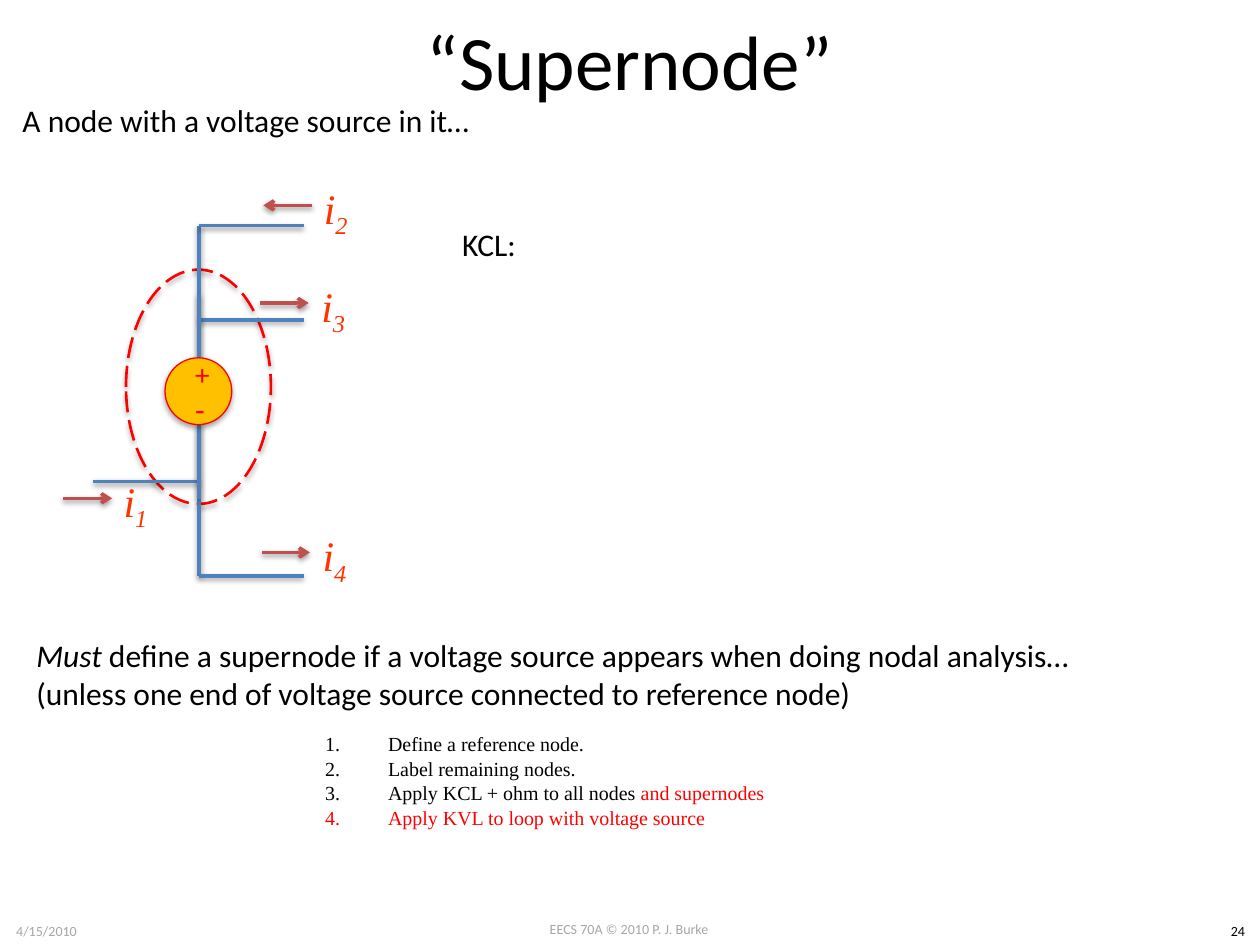
"""Build the supernode slide with its circuit sketch, analysis rules and numbered steps."""
from lxml.etree import SubElement
from pptx import Presentation
from pptx.dml.color import RGBColor
from pptx.enum.dml import MSO_LINE_DASH_STYLE as Dash
from pptx.enum.shapes import MSO_CONNECTOR as Connector, MSO_SHAPE as Shape
from pptx.enum.text import MSO_ANCHOR as Anchor, MSO_AUTO_SIZE as AutoSize, PP_ALIGN as Align
from pptx.oxml.ns import qn
from pptx.util import Inches, Pt

BLACK = RGBColor(0x00, 0x00, 0x00)
GREY = RGBColor(0xA6, 0xA6, 0xA6)
RED = RGBColor(0xFF, 0x00, 0x00)
ORANGE = RGBColor(0xFF, 0x33, 0x00)
GOLD = RGBColor(0xFF, 0xC0, 0x00)
WIRE_BLUE = RGBColor(0x4F, 0x81, 0xBD)
ARROW_RED = RGBColor(0xC0, 0x50, 0x4D)
SERIF = "Times New Roman"

presentation = Presentation()
presentation.slide_width, presentation.slide_height = Inches(10), Inches(7.5)
CELL = presentation.slide_width // 100
slide = presentation.slides.add_slide(presentation.slide_layouts[1])


def add_text(box, paragraphs, size=18, color=BLACK, font="Calibri", align=Align.LEFT,
             anchor=Anchor.TOP, wrap=True, shape=None):
    """Write paragraphs of (text, font overrides) runs into a box given in grid cells."""
    shape = shape or slide.shapes.add_textbox(0, 0, CELL, CELL)
    for side, cells in zip(("left", "top", "width", "height"), box):
        setattr(shape, side, round(cells * CELL))
    frame = shape.text_frame
    for name, value in {"auto_size": AutoSize.NONE, "word_wrap": wrap,
                        "vertical_anchor": anchor}.items():
        setattr(frame, name, value)
    for index, runs in enumerate(paragraphs):
        paragraph = frame.add_paragraph() if index else frame.paragraphs[0]
        paragraph.alignment = align
        for text, overrides in runs:
            run = paragraph.add_run()
            run.text = text
            look = {"name": font, "size": Pt(size), "color": color, **overrides}
            run.font.color.rgb = look.pop("color")
            baseline = look.pop("baseline", None)
            for name, value in look.items():
                setattr(run.font, name, value)
            if baseline:
                run._r.get_or_add_rPr().set("baseline", baseline)
    return frame


def outline(shape, color, width, opacity=38, distance=1.6):
    """Set the line of a shape and give it a soft shadow below."""
    shape.line.color.rgb = color
    shape.line.width = Pt(width)
    effects = SubElement(shape.element.spPr, qn("a:effectLst"))
    shadow = SubElement(effects, qn("a:outerShdw"), blurRad=str(Pt(3.1)),
                        dist=str(Pt(distance)), dir="5400000", rotWithShape="0")
    black = SubElement(shadow, qn("a:srgbClr"), val="000000")
    SubElement(black, qn("a:alpha"), val=str(opacity * 1000))


for text, box, color in [
    ("EECS 70A © 2010 P. J. Burke", (38.3, 72.6, 23.3, 2.4), GREY),
    ("4/15/2010", (0, 72.7, 7.4, 2.4), GREY),
    ("24", (96.5, 72.7, 3.5, 2.4), BLACK),
]:
    add_text(box, [[(text, {})]], size=8, color=color, align=Align.CENTER)

add_text((5, 0, 90, 9.5), [[("“Supernode”", {})]], size=44, align=Align.CENTER,
         anchor=Anchor.MIDDLE, shape=slide.shapes.title)

boundary = slide.shapes.add_shape(Shape.OVAL, *[round(v * CELL) for v in (10, 21.4, 11.5, 18.6)])
boundary.fill.background()
boundary.line.dash_style = Dash.LONG_DASH
outline(boundary, RED, 1.5, 35, 1.8)

TRUNK, BRANCH_END = 15.8, 24.1
wires = [(TRUNK, 45.7, TRUNK, 17.9), (7.4, 38.2, TRUNK, 38.2)]
wires += [(TRUNK, row, BRANCH_END, row) for row in (17.9, 25.4, 45.7)]
leads = [(TRUNK, 39.6, TRUNK, 33.7), (TRUNK, 28.4, TRUNK, 23.3)]
currents = [("2", 24.8, 20.9, 16.3, 22.8), ("3", 20.6, 24.5, 24.05, 22.6),
            ("1", 5, 8.9, 39.55, 6.9), ("4", 20.8, 24.6, 43.85, 22.7)]
arrows = [(start, row, end, row) for _, start, end, row, _ in currents]

for ends, color in [(wire, WIRE_BLUE) for wire in wires + leads] + [(a, ARROW_RED) for a in arrows]:
    line = slide.shapes.add_connector(Connector.STRAIGHT, *[round(v * CELL) for v in ends])
    outline(line, color, 2)
    if color == ARROW_RED:
        SubElement(line.line._get_or_add_ln(), qn("a:tailEnd"), type="arrow")

for number, _, _, row, label_left in currents:
    add_text((label_left, row - 2.6, 7.7, 6.1),
             [[("i", {"italic": True}), (number, {"italic": True, "baseline": "-25000"})]],
             size=24, color=ORANGE, font=SERIF, align=Align.CENTER, anchor=Anchor.MIDDLE)

source = slide.shapes.add_shape(Shape.OVAL, *[round(v * CELL) for v in (13.1, 28.4, 5.3, 5.3)])
source.fill.solid()
source.fill.fore_color.rgb = GOLD
outline(source, RED, 0.75, 35, 1.8)
for sign, top, size in [("+", 28, 16.6), ("-", 30.8, 18)]:
    add_text((14.5, top, 2.6, 3.3), [[(sign, {})]], size=size, color=RED,
             align=Align.CENTER, anchor=Anchor.MIDDLE)

for box, paragraphs in [
    ((0.8, 7.5, 38.1, 4), [[("A node with a voltage source in it…", {})]]),
    ((35.7, 17.4, 6.3, 4), [[("KCL:", {})]]),
    ((1.9, 50, 85, 7.1), [
        [("Must", {"italic": True}),
         (" define a supernode if a voltage source appears when doing nodal analysis…", {})],
        [("(unless one end of voltage source connected to reference node)", {})]]),
]:
    add_text(box, paragraphs, wrap=False)

steps = add_text((24.8, 58.3, 36.9, 7.3), [
    [("Define a reference node.", {})],
    [("Label remaining nodes.", {})],
    [("Apply KCL + ohm to all nodes ", {}), ("and supernodes", {"color": RED})],
    [("Apply KVL to loop with voltage source", {"color": RED})],
], size=11.4, font=SERIF, anchor=Anchor.MIDDLE, shape=slide.placeholders[1])
for paragraph in steps.paragraphs:
    paragraph.space_before = Pt(0.6)
    properties = paragraph._p.get_or_add_pPr()
    for name, value in {"marL": Inches(0.5), "indent": -Inches(0.5)}.items():
        properties.set(name, str(value))
    SubElement(properties, qn("a:buFont"), typeface=SERIF)
    SubElement(properties, qn("a:buAutoNum"), type="arabicPeriod")

presentation.save("out.pptx")
